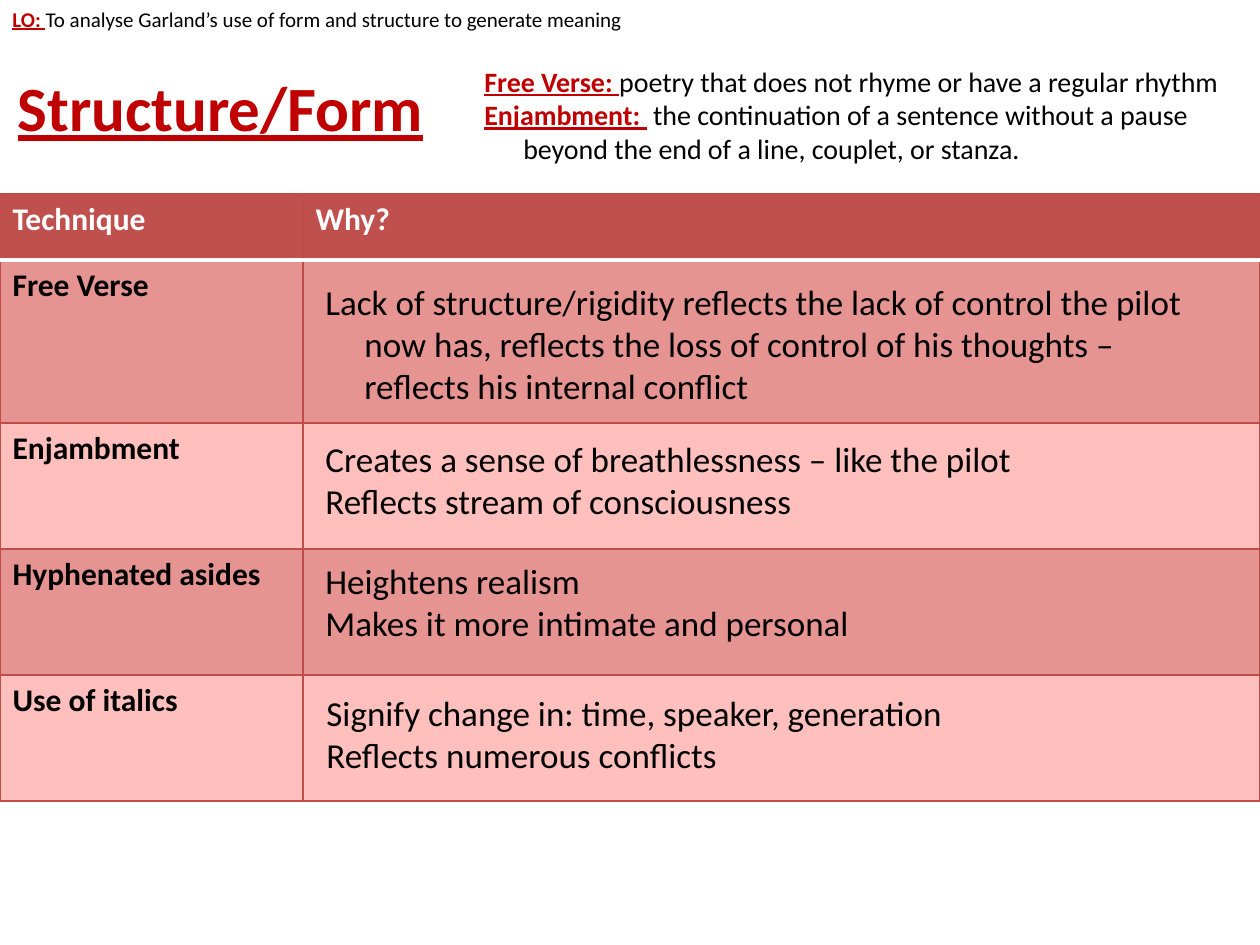
from dataclasses import dataclass

from lxml.etree import SubElement
from pptx import Presentation
from pptx.dml.color import RGBColor
from pptx.enum.shapes import MSO_SHAPE
from pptx.enum.text import MSO_ANCHOR, MSO_AUTO_SIZE, PP_ALIGN
from pptx.oxml.ns import qn
from pptx.slide import Slide
from pptx.util import Pt

EMU_PER_PX = 914400 / 126
FONT = "Calibri"
COLOURS = {
    "white": "FFFFFF",
    "black": "000000",
    "accent": "C00000",
    "header": "C0504D",
    "dark_row": "E59491",
    "light_row": "FFC0BD",
    "border": "BF4C48",
}


def px(length):
    return round(length * EMU_PER_PX)


def colour(name):
    return RGBColor.from_string(COLOURS[name])


@dataclass
class SlideBuilder:
    slide: Slide
    hanging: int = 39
    panel_opacity: int = 88

    def style(self, span, size, colour_name="black", bold=False, underline=False):
        span.font.name = FONT
        span.font.size = Pt(size)
        span.font.bold = bold
        span.font.underline = underline
        span.font.color.rgb = colour(colour_name)

    def panel_fill(self, box):
        box.fill.solid()
        box.fill.fore_color.rgb = colour("white")
        shade = box._element.spPr.find(qn("a:solidFill")).find(qn("a:srgbClr"))
        SubElement(shade, qn("a:alpha"), val=str(self.panel_opacity * 1000))

    def title(self, text, left, top, width, height):
        box = self.slide.shapes.title
        box.left, box.top, box.width, box.height = map(px, (left, top, width, height))
        self.panel_fill(box)
        frame = box.text_frame
        frame.text = text
        frame.word_wrap = True
        frame.auto_size = MSO_AUTO_SIZE.NONE
        frame.vertical_anchor = MSO_ANCHOR.TOP
        para = frame.paragraphs[0]
        para.alignment = PP_ALIGN.LEFT
        self.style(para.runs[0], 36, "accent", True, True)

    def panel(self, lines, left, top, width, height, size):
        area = map(px, (left, top, width, height))
        box = self.slide.shapes.add_shape(MSO_SHAPE.RECTANGLE, *area)
        box.shadow.inherit = False
        box.line.fill.background()
        self.panel_fill(box)
        self.fill_text(box.text_frame, lines, size)

    def text(self, lines, left, top, width, height, size):
        box = self.slide.shapes.add_textbox(*map(px, (left, top, width, height)))
        self.fill_text(box.text_frame, lines, size)

    def fill_text(self, frame, lines, size):
        frame.word_wrap = True
        frame.vertical_anchor = MSO_ANCHOR.TOP
        for index, (label, body) in enumerate(lines):
            para = frame.add_paragraph() if index else frame.paragraphs[0]
            para.alignment = PP_ALIGN.LEFT
            properties = para._p.get_or_add_pPr()
            properties.set("marL", str(px(self.hanging)))
            properties.set("indent", str(-px(self.hanging)))
            if label:
                span = para.add_run()
                span.text = label
                self.style(span, size, "accent", True, True)
            span = para.add_run()
            span.text = body
            self.style(span, size)

    def border(self, cell, side, colour_name, width):
        line = SubElement(cell._tc.get_or_add_tcPr(), qn(f"a:ln{side}"), w=str(Pt(width)))
        fill = SubElement(line, qn("a:solidFill"))
        SubElement(fill, qn("a:srgbClr"), val=COLOURS[colour_name])

    def cell(self, cell, text, row):
        header = row == 0
        cell.text = text
        for span in cell.text_frame.paragraphs[0].runs:
            self.style(span, 18, "white" if header else "black", True)
        for side in "LRTB":
            divider = (side == "B" and header) or (side == "T" and row == 1)
            self.border(cell, side, *(("white", 2) if divider else ("border", 0.75)))
        cell.fill.solid()
        band = "dark_row" if row % 2 else "light_row"
        cell.fill.fore_color.rgb = colour("header" if header else band)

    def table(self, rows, left, top, widths, heights):
        frame = self.slide.shapes.add_table(
            len(rows), len(widths), *map(px, (left, top, sum(widths), sum(heights)))
        )
        table = frame.table
        for column, width in zip(table.columns, widths):
            column.width = px(width)
        for row, height in zip(table.rows, heights):
            row.height = px(height)
        for row, texts in enumerate(rows):
            for column, text in enumerate(texts):
                self.cell(table.cell(row, column), text, row)


def main():
    deck = Presentation()
    deck.slide_width, deck.slide_height = px(1260), px(945)
    page = SlideBuilder(deck.slides.add_slide(deck.slide_layouts[5]))

    objective = "To analyse Garland’s use of form and structure to generate meaning"
    page.panel([("LO: ", objective)], 0, 0, 1260, 38, 12)
    page.title("Structure/Form", 5, 62, 436, 89)

    techniques = ["Free Verse", "Enjambment", "Hyphenated asides", "Use of italics"]
    rows = [("Technique", "Why?")] + [(name, "") for name in techniques]
    page.table(rows, 0, 194, [303, 957], [66, 163, 126, 126, 126])

    definitions = [
        ("Free Verse: ", "poetry that does not rhyme or have a regular rhythm"),
        (
            "Enjambment: ",
            " the continuation of a sentence without a pause "
            "beyond the end of a line, couplet, or stanza.",
        ),
    ]
    page.panel(definitions, 472, 58, 779, 115, 16)

    reasons = [
        (313, 274, 140, [
            "Lack of structure/rigidity reflects the lack of control the pilot "
            "now has, reflects the loss of control of his thoughts – "
            "reflects his internal conflict",
        ]),
        (313, 431, 97, [
            "Creates a sense of breathlessness – like the pilot",
            "Reflects stream of consciousness",
        ]),
        (313, 553, 97, ["Heightens realism", "Makes it more intimate and personal"]),
        (314, 685, 97, [
            "Signify change in: time, speaker, generation",
            "Reflects numerous conflicts",
        ]),
    ]
    for left, top, height, lines in reasons:
        page.text([("", line) for line in lines], left, top, 912, height, 20)

    deck.save("out.pptx")


if __name__ == "__main__":
    main()
